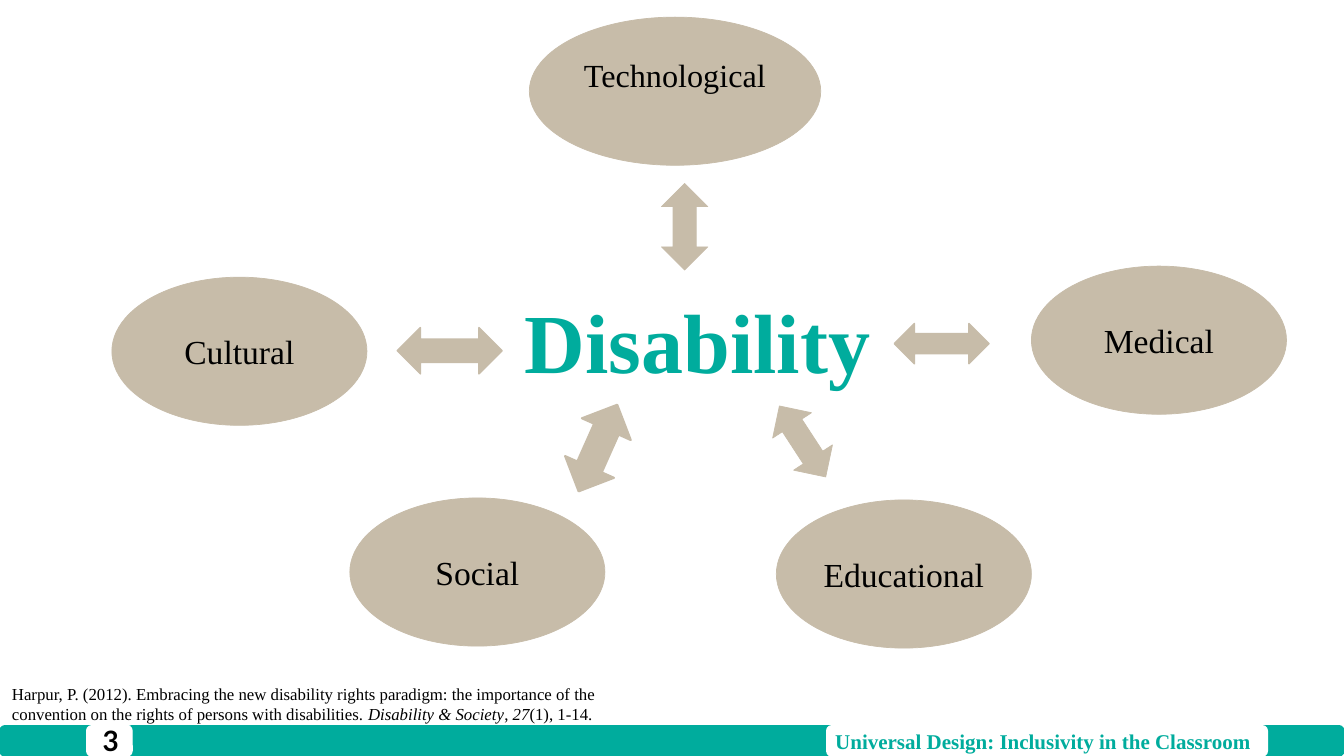
"""Build a slide relating disability to five surrounding perspectives."""
from pptx import Presentation
from pptx.dml.color import RGBColor
from pptx.enum.shapes import MSO_SHAPE
from pptx.enum.text import MSO_ANCHOR, PP_ALIGN
from pptx.util import Inches, Pt

TEAL = RGBColor(0x00, 0xAC, 0x9D)
SAND = RGBColor(0xC7, 0xBC, 0xA9)
WHITE = RGBColor(0xFF, 0xFF, 0xFF)
BLACK = RGBColor(0x00, 0x00, 0x00)
ELLIPSE = MSO_SHAPE.OVAL
ARROW = MSO_SHAPE.LEFT_RIGHT_ARROW
ROUNDED = MSO_SHAPE.ROUNDED_RECTANGLE
MIDDLE, TOP = MSO_ANCHOR.MIDDLE, MSO_ANCHOR.TOP
CENTER, LEFT = PP_ALIGN.CENTER, PP_ALIGN.LEFT
SERIF, SANS = "Times New Roman", "Lato"

FOOTER_TOP, FOOTER_HEIGHT = 7.2, 0.3
FOOTER_PANELS = [
    (0, 1.26, TEAL),
    (1.26, 12.07, TEAL),
    (0.86, 0.45, WHITE),
    (8.2, 4.37, WHITE),
]
PERSPECTIVE_HEIGHT = 1.47
PERSPECTIVES = [
    ("Technological", 5.25, 0.17, 2.89, 23, 0.38),
    ("Medical", 10.23, 2.64, 2.53, 24, 0.05),
    ("Educational", 7.7, 4.96, 2.53, 24, 0.05),
    ("Social", 3.47, 4.94, 2.53, 24, 0.05),
    ("Cultural", 1.11, 2.75, 2.53, 24, 0.05),
]
ARROWS = [
    ((3.94, 3.25, 1.04, 0.46), 0, 1),
    ((5.46, 4.18, 0.94, 0.53), 114, 1.5),
    ((7.54, 4.15, 0.84, 0.46), 56.9, 0.5),
    ((8.87, 3.21, 0.94, 0.4), 0, 1),
    ((6.36, 2.02, 0.86, 0.46), 90, 0.5),
]
CITATION = [
    ("Harpur, P. (2012). Embracing the new disability rights paradigm: "
     "the importance of the convention on the rights of persons with "
     "disabilities. ", False),
    ("Disability & Society", True),
    (", ", False),
    ("27", True),
    ("(1), 1-14.", False),
]
LABELS = [
    ([("Universal Design: Inclusivity in the Classroom", False)],
     (8.12, 7.24, 4.45, 0.22), 15, SERIF, TEAL, True, CENTER, MIDDLE, True),
    ([("Disability", False)],
     (4.96, 2.82, 3.92, 1.11), 60, SERIF, TEAL, True, CENTER, TOP, True),
    (CITATION,
     (0.02, 6.73, 6.68, 0.5), 12, SERIF, BLACK, False, LEFT, TOP, True),
    ([("3", False)],
     (0.92, 7.13, 0.34, 0.44), 20, SANS, BLACK, True, LEFT, TOP, False),
]


def add_filled(slide, preset, box, color, line_width):
    shape = slide.shapes.add_shape(preset, *map(Inches, box))
    shape.shadow.inherit = False
    shape.fill.solid()
    shape.fill.fore_color.rgb = color
    shape.line.color.rgb = color
    shape.line.width = Pt(line_width)
    return shape


def write(frame, runs, size, face, color, bold, align, anchor, wrap):
    frame.word_wrap = wrap
    frame.vertical_anchor = anchor
    paragraph = frame.paragraphs[0]
    paragraph.alignment = align
    font = paragraph.font
    font.size, font.name, font.bold = Pt(size), face, bold
    font.color.rgb = color
    for text, italic in runs:
        run = paragraph.add_run()
        run.text = text
        if italic:
            run.font.italic = True


def main():
    deck = Presentation()
    deck.slide_width, deck.slide_height = Inches(13.33), Inches(7.5)
    slide = deck.slides.add_slide(deck.slide_layouts[6])

    for left, width, color in FOOTER_PANELS:
        add_filled(slide, ROUNDED, (left, FOOTER_TOP, width, FOOTER_HEIGHT), color, 1)

    for box, angle, line_width in ARROWS:
        arrow = add_filled(slide, ARROW, box, SAND, line_width)
        arrow.rotation = angle

    for name, left, top, width, size, bottom_inset in PERSPECTIVES:
        box = (left, top, width, PERSPECTIVE_HEIGHT)
        perspective = add_filled(slide, ELLIPSE, box, SAND, 0.5)
        frame = perspective.text_frame
        frame.margin_left = frame.margin_right = Inches(0.05)
        frame.margin_bottom = Inches(bottom_inset)
        write(frame, [(name, False)], size, SERIF, BLACK, False, CENTER, MIDDLE, True)

    for runs, box, *style in LABELS:
        label = slide.shapes.add_textbox(*map(Inches, box))
        write(label.text_frame, runs, *style)

    deck.save("out.pptx")


if __name__ == "__main__":
    main()
